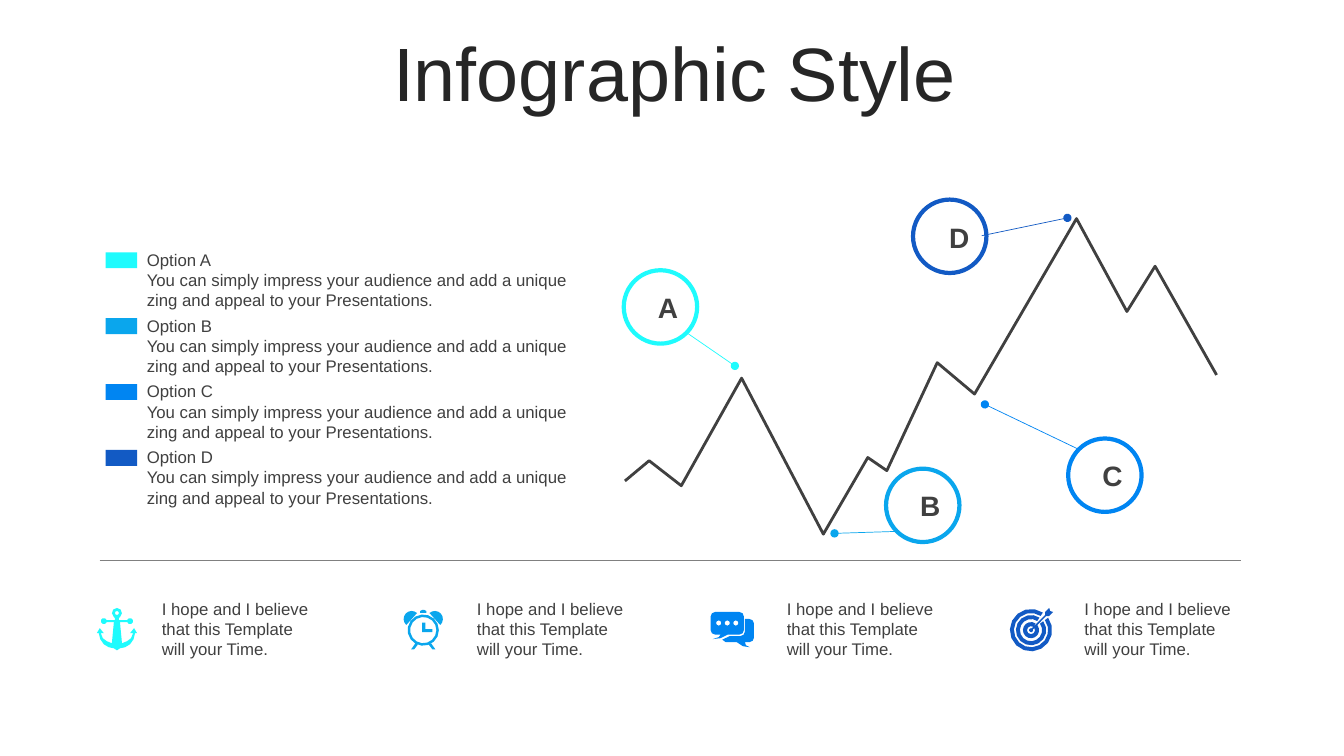
"""Build the Infographic Style slide with a peak line, four options and four captions."""
from dataclasses import dataclass
from math import cos, radians, sin
from typing import Any

from lxml.etree import SubElement
from pptx import Presentation
from pptx.dml.color import RGBColor as RGB
from pptx.enum.shapes import MSO_CONNECTOR as LINE, MSO_SHAPE as SHAPE
from pptx.enum.text import MSO_ANCHOR as ANCHOR, MSO_AUTO_SIZE as FIT, PP_ALIGN as ALIGN
from pptx.oxml.ns import qn
from pptx.util import Cm, Pt

Point = tuple[float, float]
Contour = list[Point]


@dataclass(frozen=True)
class Theme:
    font: str = "Arial"
    title: RGB = RGB(0x26, 0x26, 0x26)
    text: RGB = RGB(0x40, 0x40, 0x40)
    rule: RGB = RGB(0x80, 0x80, 0x80)
    white: RGB = RGB(0xFF, 0xFF, 0xFF)
    cyan: RGB = RGB(0x1F, 0xFB, 0xFD)
    sky: RGB = RGB(0x0A, 0xA6, 0xED)
    blue: RGB = RGB(0x00, 0x85, 0xF2)
    navy: RGB = RGB(0x12, 0x5A, 0xC4)
    title_size: int = 54
    letter_size: int = 20
    body_size: int = 12
    thin: float = 0.5
    peak_width: float = 2
    ring_width: float = 3


@dataclass(frozen=True)
class Badge:
    letter: str
    color: RGB
    corner: Point
    start: Point
    end: Point
    letter_shift: Point = (0.61, 0.38)
    letter_width: float = 0.69


@dataclass(frozen=True)
class Feature:
    color: RGB
    icon_corner: Point
    text_left: float
    contours: list[Contour]


T = Theme()
OPTION_TEXT = "You can simply impress your audience and add a unique zing and appeal to your Presentations."
FEATURE_TEXT = "I hope and I believe that this Template will your Time."
PEAKS: Contour = [
    (15.75, 12.12), (16.36, 11.61), (17.17, 12.24), (18.69, 9.53), (20.75, 13.46),
    (21.87, 11.53), (22.35, 11.86), (23.62, 9.14), (24.56, 9.93), (27.13, 5.51),
    (28.4, 7.85), (29.11, 6.71), (30.66, 9.45),
]
BADGES = [
    Badge("A", T.cyan, (15.72, 6.81), (17.3, 8.38), (18.52, 9.22)),
    Badge("B", T.sky, (22.33, 11.81), (22.61, 13.39), (21.03, 13.44)),
    Badge("C", T.blue, (26.92, 11.05), (27.2, 11.33), (24.82, 10.19)),
    Badge("D", T.navy, (23.01, 5.03), (24.74, 5.94), (26.9, 5.49), (0.66, 0.4), 0.53),
]


def arc(cx: float, cy: float, r: float, a0: int = 0, a1: int = 360) -> Contour:
    sweep = a1 - a0
    n = max(2, round(abs(sweep) / (24 if r > 6 else 45)))
    angles = [radians(a0 + sweep * i / n) for i in range(n if sweep == 360 else n + 1)]
    return [(cx + r * cos(a), cy + r * sin(a)) for a in angles]


def mirrored(half: Contour, axis: float) -> Contour:
    return half + [(2 * axis - x, y) for x, y in reversed(half)]


def anchor_icon() -> list[Contour]:
    half = [
        *arc(20, 5, 5, -90, 50), (22, 10), (22, 12), *arc(33, 13, 3, -160, 160),
        (23, 14), (25, 35), (30, 33), (34, 30), (36, 25), (33, 25), (37, 20),
        (40, 25), (38, 25), (36.5, 31), (33, 36), (28, 39), (23, 40), (20, 42),
    ]
    return [mirrored(half, 20), arc(20, 5, 2)]


def clock_icon() -> list[Contour]:
    bell = arc(8.5, 9, 8, 132, 312)
    leg = [(12, 33.4), (8, 39), (11, 39), (14.5, 34.5)]
    sides = [[(40 - x, y) for x, y in part] for part in (bell, leg)]
    hands = [(19, 12.5), (22, 12.5), (22, 19), (29, 19), (29, 22), (19, 22)]
    knob = mirrored([(21, 0), (23, 1), (23, 3)], 20)
    return [arc(20, 20, 15.5), arc(20, 20, 13), hands, knob, bell, leg, *sides]


def chat_icon() -> list[Contour]:
    front = [
        *arc(28.5, 4.5, 4.5, -90, 0), *arc(28.5, 18, 4.5, 0, 90),
        (17, 22.5), (10, 26), (2, 27), (8, 25), (10, 22.5),
        *arc(4.5, 18, 4.5, 90, 180), *arc(4.5, 4.5, 4.5, 180, 270),
    ]
    back = [
        (34, 7), *arc(38.5, 11.5, 4.5, -90, 0), *arc(38.5, 25.5, 4.5, 0, 90),
        (34, 30), (35, 33), (39, 35), (32, 34), (26, 30), (15, 30), (11.5, 27.5),
        (19, 24), *arc(29.5, 19.5, 4.5, 90, 0),
    ]
    return [front, back, *(arc(x, 11, 2.6) for x in (8, 16.5, 25))]


def target_icon() -> list[Contour]:
    rings = [arc(21, 22, r, -36, 304) + arc(21, 22, r - 4, 304, -36) for r in (21, 15, 8)]
    arrow = [
        (39, 0), (40, 3), (43, 4), (39, 8), (36, 8), (23.2, 21),
        *arc(21, 22, 2, -20, 290), (22, 20), (35, 7), (35, 4),
    ]
    return [*rings, arrow]


FEATURES = [
    Feature(T.cyan, (2.44, 15.32), 3.83, anchor_icon()),
    Feature(T.sky, (10.16, 15.37), 11.77, clock_icon()),
    Feature(T.blue, (17.91, 15.42), 19.58, chat_icon()),
    Feature(T.navy, (25.45, 15.32), 27.08, target_icon()),
]


def apply(obj: Any, values: dict[str, Any]) -> None:
    for name, value in values.items():
        setattr(obj, name, value)


def paint(s: Any, fill: RGB | None, line: RGB | None = None, width: float = 0) -> None:
    s.shadow.inherit = False
    if fill is None:
        s.fill.background()
    else:
        s.fill.solid()
        s.fill.fore_color.rgb = fill
    if line is None:
        s.line.fill.background()
    else:
        s.line.color.rgb = line
        s.line.width = Pt(width)


def add_text(shapes: Any, box: tuple[float, ...], lines: list[str], size: int = T.body_size,
             color: RGB = T.text, bold: bool = False, frame: dict[str, Any] | None = None,
             para: dict[str, Any] | None = None) -> None:
    tf = shapes.add_textbox(*map(Cm, box)).text_frame
    apply(tf, {"word_wrap": True, "auto_size": FIT.SHAPE_TO_FIT_TEXT} | (frame or {}))
    for i, line in enumerate(lines):
        p = tf.add_paragraph() if i else tf.paragraphs[0]
        apply(p, para or {})
        r = p.add_run()
        r.text = line
        apply(r.font, {"name": T.font, "size": Pt(size), "bold": bold})
        r.font.color.rgb = color


def add_outline(shapes: Any, contours: list[Contour], close: bool) -> Any:
    first, *others = [[(Cm(x), Cm(y)) for x, y in c] for c in contours]
    builder = shapes.build_freeform(*first[0])
    builder.add_line_segments(first[1:], close=close)
    for c in others:
        builder.move_to(*c[0])
        builder.add_line_segments(c[1:], close=close)
    return builder.convert_to_shape()


def add_line(shapes: Any, start: Point, end: Point, color: RGB, dot: bool = False) -> None:
    s = shapes.add_connector(LINE.STRAIGHT, *map(Cm, start + end))
    s.line.color.rgb = color
    s.line.width = Pt(T.thin)
    if dot:
        SubElement(s.line._get_or_add_ln(), qn("a:tailEnd"), type="oval")
    SubElement(s._element.spPr, qn("a:effectLst"))


def add_badge(shapes: Any, b: Badge) -> None:
    (x, y), (dx, dy) = b.corner, b.letter_shift
    paint(shapes.add_shape(SHAPE.OVAL, *map(Cm, (x, y, 1.85, 1.85))), T.white, b.color, T.ring_width)
    add_line(shapes, b.start, b.end, b.color, dot=True)
    add_text(shapes, (x + dx, y + dy, b.letter_width, 1.12), [b.letter], T.letter_size,
             bold=True, para={"alignment": ALIGN.CENTER})


def add_option(shapes: Any, row: int, b: Badge) -> None:
    top = 6.16 + 1.66 * row
    paint(shapes.add_shape(SHAPE.RECTANGLE, *map(Cm, (2.66, top + 0.2, 0.8, 0.4))), b.color)
    add_text(shapes, (3.45, top, 11.18, 1.8), [f"Option {b.letter}", OPTION_TEXT])


def add_feature(shapes: Any, f: Feature) -> None:
    left, top = f.icon_corner
    placed = [[(left + x * 2.54 / 100, top + y * 2.54 / 100) for x, y in c] for c in f.contours]
    paint(add_outline(shapes, placed, close=True), f.color)
    add_text(shapes, (f.text_left, 14.96, 4.39, 1.8), [FEATURE_TEXT])


def main() -> None:
    prs = Presentation()
    apply(prs, {"slide_width": Cm(33.87), "slide_height": Cm(19.05)})
    shapes = prs.slides.add_slide(prs.slide_layouts[6]).shapes
    add_text(shapes, (0.92, 0.94, 32.16, 2.01), ["Infographic Style"], T.title_size, T.title,
             frame={"vertical_anchor": ANCHOR.MIDDLE, "auto_size": FIT.NONE},
             para={"alignment": ALIGN.CENTER, "line_spacing": 0.9, "space_before": Pt(10)})
    paint(add_outline(shapes, [PEAKS], close=False), None, T.text, T.peak_width)
    for row, b in enumerate(BADGES):
        add_badge(shapes, b)
        add_option(shapes, row, b)
    add_line(shapes, (2.51, 14.12), (31.27, 14.12), T.rule)
    for f in FEATURES:
        add_feature(shapes, f)
    prs.save("out.pptx")


if __name__ == "__main__":
    main()
